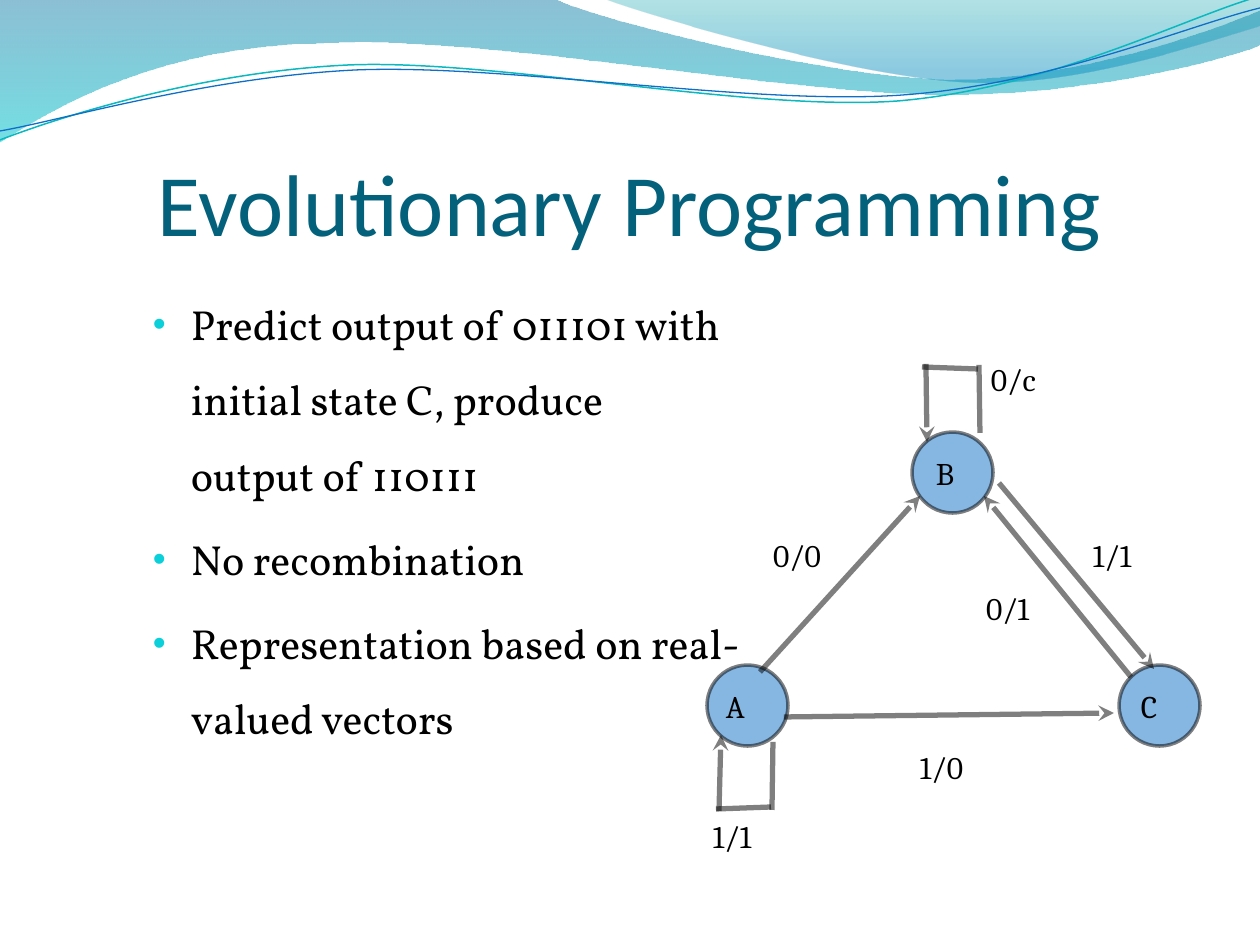
import math

import pptx
import pptx.util
from lxml import etree
from pptx.dml.color import RGBColor
from pptx.enum.shapes import MSO_CONNECTOR, MSO_SHAPE
from pptx.enum.text import MSO_ANCHOR, MSO_AUTO_SIZE, PP_ALIGN
from pptx.oxml.ns import qn

PX = 914400 / 126
BLACK = RGBColor(0x00, 0x00, 0x00)
TITLE = RGBColor(0x04, 0x61, 0x7B)
BLUE = RGBColor(0x0F, 0x6F, 0xC6)
TEAL = RGBColor(0x0A, 0xB8, 0xBF)
BAND_TOP = RGBColor(0x00, 0x74, 0xA1)
BAND_BOTTOM = RGBColor(0x00, 0xC6, 0xCF)
CREST_TOP = RGBColor(0x00, 0xA1, 0xA9)
CREST_BOTTOM = RGBColor(0x00, 0x8B, 0xBF)
BULLET = "0BD0D9"
WAVE_TILT = -2.7


def px(n):
    return round(n * PX)


def sub(parent, tag, **attrs):
    return etree.SubElement(parent, qn(tag), attrs)


def set_alphas(element, alphas):
    """Give the RGB colours inside element these opacities, in percent."""
    for color, alpha in zip(element.iter(qn("a:srgbClr")), alphas):
        sub(color, "a:alpha", val=str(alpha * 1000))


def add_text(shapes, box, paragraphs, *, font, size, color=BLACK, wrap=True,
             align=PP_ALIGN.LEFT, anchor=MSO_ANCHOR.TOP, insets=(0, 0, 0, 0),
             fit=MSO_AUTO_SIZE.NONE, spacing=None, gap=0):
    sp = shapes.add_textbox(*map(px, box))
    tf = sp.text_frame
    tf.word_wrap = wrap
    tf.auto_size = fit
    tf.vertical_anchor = anchor
    tf.margin_left, tf.margin_top, tf.margin_right, tf.margin_bottom = map(px, insets)
    for i, text in enumerate(paragraphs):
        p = tf.add_paragraph() if i else tf.paragraphs[0]
        p.text = text
        p.alignment = align
        if spacing:
            p.line_spacing = spacing
        if i and gap:
            p.space_before = pptx.util.Pt(gap)
        for r in p.runs:
            r.font.name = font
            r.font.size = pptx.util.Pt(size)
            r.font.color.rgb = color
    return sp


def add_curve(shapes, box, start, segments, *, close=False, tilt=0):
    """Draw an outline; a segment of one point is straight, of three is a cubic."""
    left, top, width, height = box
    right, bottom = left + width, top + height
    builder = shapes.build_freeform(px(left), px(top))
    builder.add_line_segments([(px(right), px(top)), (px(right), px(bottom)),
                               (px(left), px(bottom))])
    sp = builder.convert_to_shape()
    sp.shadow.inherit = False
    sp.rotation = tilt
    cos, sin = math.cos(math.radians(tilt)), math.sin(math.radians(tilt))
    outline = next(sp.element.iter(qn("a:path")))
    for child in list(outline):
        outline.remove(child)

    def add_step(tag, points):
        step = sub(outline, tag)
        for x, y in points:
            dx, dy = x - left - width / 2, y - top - height / 2
            sub(step, "a:pt", x=str(px(dx * cos + dy * sin + width / 2)),
                y=str(px(dy * cos - dx * sin + height / 2)))

    add_step("a:moveTo", [start])
    for segment in segments:
        add_step("a:lnTo" if len(segment) == 1 else "a:cubicBezTo", segment)
    if close:
        sub(outline, "a:close")
    return sp


def add_wave_fill(shapes, box, start, segments, stops):
    sp = add_curve(shapes, box, start, segments, close=True)
    sp.line.fill.background()
    sp.fill.gradient()
    sp.fill.gradient_angle = 270
    for stop, (position, color, _) in zip(sp.fill.gradient_stops, stops):
        stop.position = position
        stop.color.rgb = color
    set_alphas(sp.element.spPr, [alpha for _, _, alpha in stops])


def add_wave_line(shapes, box, start, segments, color, width):
    sp = add_curve(shapes, box, start, segments, tilt=WAVE_TILT)
    sp.fill.background()
    sp.line.color.rgb = color
    sp.line.width = pptx.util.Pt(width)


def add_waves(s):
    add_wave_fill(s.shapes, (-1, -1, 1262, 143), (0, 0), [
        [(554, -1)],
        [(600, 21), (837, 79), (955, 79)],
        [(1075, 79), (1207, 33), (1260, 11)],
        [(1261, 45)],
        [(1239, 55), (1096, 96), (940, 94)],
        [(784, 94), (481, 35), (324, 43)],
        [(163, 45), (58, 105), (-1, 142)],
        [(0, 0)],
    ], [(0, BAND_TOP, 45), (1, BAND_BOTTOM, 55)])
    add_wave_fill(s.shapes, (604, -1, 656, 88), (604, -1), [
        [(641, 14), (859, 78), (969, 82)],
        [(1079, 87), (1211, 40), (1260, 26)],
        [(1260, 0)],
        [(604, -1)],
    ], [(0, CREST_TOP, 30), (0.8, CREST_BOTTOM, 45)])
    add_wave_line(s.shapes, (-3, 28, 1263, 89), (0, 140), [
        [(60, 117), (199, 72), (349, 65)],
        [(498, 59), (747, 112), (898, 101)],
        [(1050, 88), (1182, 19), (1257, -3)],
    ], TEAL, 0.85)
    add_wave_line(s.shapes, (-3, 38, 1264, 73), (0, 131), [
        [(59, 121), (207, 77), (357, 70)],
        [(508, 64), (752, 106), (903, 95)],
        [(1053, 84), (1186, 26), (1260, 8)],
    ], BLUE, 0.75)


def add_bullets(s, box, items):
    sp = add_text(s.shapes, box, items, font="Vollkorn", size=24,
                  insets=(13, 6, 13, 6), spacing=1.5, gap=4.8)
    for p in sp.element.iter(qn("a:p")):
        pPr = p.get_or_add_pPr()
        pPr.set("marL", str(px(115)))
        pPr.set("indent", str(px(-38)))
        sub(sub(pPr, "a:buClr"), "a:srgbClr", val=BULLET)
        sub(pPr, "a:buSzPct", val="88000")
        sub(pPr, "a:buFont", typeface="Arial")
        sub(pPr, "a:buChar", char="•")


def add_edge(shapes, begin, end, arrow):
    """Draw a translucent line, with any arrowhead at its beginning."""
    cxn = shapes.add_connector(MSO_CONNECTOR.STRAIGHT, *map(px, begin + end))
    cxn.line.color.rgb = BLACK
    cxn.line.width = pptx.util.Pt(3)
    spPr = cxn.element.spPr
    set_alphas(spPr, [50])
    if arrow:
        sub(spPr.find(qn("a:ln")), "a:headEnd", type="stealth")
    sub(spPr, "a:effectLst")


def add_state(shapes, x, y):
    sp = shapes.add_shape(MSO_SHAPE.OVAL, px(x), px(y), px(81), px(81))
    sp.shadow.inherit = False
    sp.fill.solid()
    sp.fill.fore_color.rgb = BLUE
    sp.line.color.rgb = BLACK
    sp.line.width = pptx.util.Pt(2)
    set_alphas(sp.element.spPr, [50, 50])


def add_state_machine(s, origin):
    left, top = origin
    shapes = s.shapes.add_group_shape().shapes
    states = [(0, 315), (412, 315), (205, 82)]
    arrows = [((277, 146), (424, 327)), ((213, 146), (53, 322)),
              ((407, 363), (77, 367)), ((447, 319), (292, 133)),
              ((14, 385), (12, 461)), ((220, 92), (219, 14))]
    loop_sides = [((66, 392), (65, 460)), ((9, 459), (64, 457)),
                  ((273, 83), (272, 15)), ((215, 17), (271, 19))]
    labels = [("1/1", 6, 458, 67), ("0/0", 66, 177, 67), ("0/c", 284, 1, 64),
              ("0/1", 279, 230, 67), ("1/1", 386, 177, 67), ("1/0", 213, 389, 67),
              ("A", 19, 328, 40), ("B", 229, 95, 35), ("C", 434, 328, 38)]
    for x, y in states:
        add_state(shapes, left + x, top + y)
    for edges, arrow in ((arrows, True), (loop_sides, False)):
        for (x1, y1), (x2, y2) in edges:
            add_edge(shapes, (left + x1, top + y1), (left + x2, top + y2), arrow)
    for text, x, y, width in labels:
        add_text(shapes, (left + x, top + y, width, 55), [text], font="Cambria", size=18,
                 wrap=False, anchor=MSO_ANCHOR.MIDDLE, fit=MSO_AUTO_SIZE.SHAPE_TO_FIT_TEXT)


def main():
    prs = pptx.Presentation()
    prs.slide_width, prs.slide_height = px(1260), px(945)
    s = prs.slides.add_slide(prs.slide_layouts[6])
    add_waves(s)
    add_text(s.shapes, (63, 96, 1134, 158), ["Evolutionary Programming"], font="Calibri",
             size=50, color=TITLE, align=PP_ALIGN.CENTER, anchor=MSO_ANCHOR.BOTTOM,
             insets=(0, 6, 0, 0))
    add_bullets(s, (63, 267, 696, 605), [
        "Predict output of 011101 with initial state C, produce\voutput of 110111",
        "No recombination",
        "Representation based on real-valued vectors",
    ])
    add_state_machine(s, (707, 350))
    prs.save("out.pptx")


if __name__ == "__main__":
    main()
